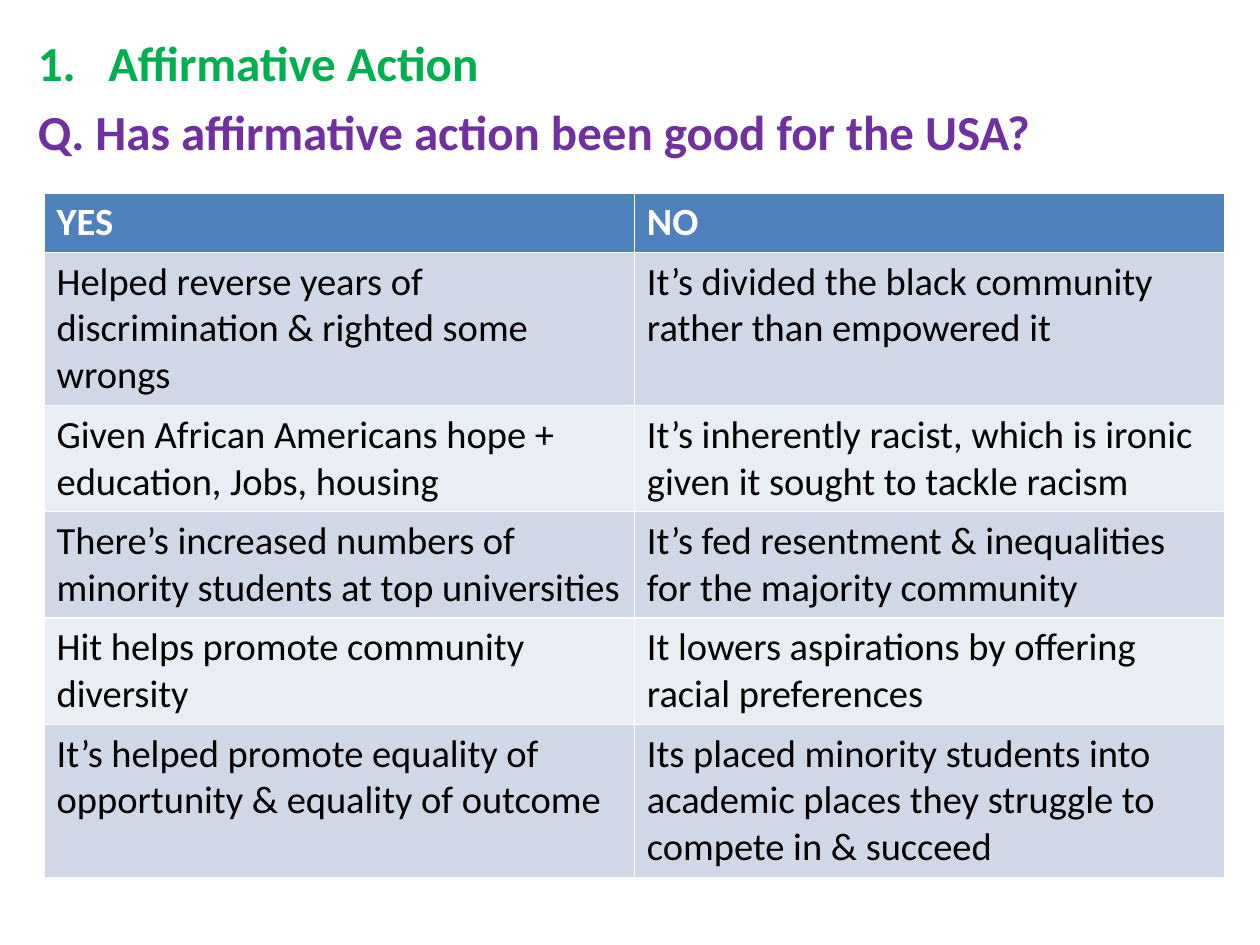
from lxml.etree import SubElement
from pptx import Presentation
from pptx.dml.color import RGBColor
from pptx.enum.text import MSO_ANCHOR, MSO_AUTO_SIZE
from pptx.oxml.ns import qn
from pptx.util import Inches, Pt

COLORS = {
    "topic": "00B050",
    "question": "7030A0",
    "header": "4F81BD",
    "band_dark": "D0D8E8",
    "band_light": "E9EDF4",
    "white": "FFFFFF",
    "black": "000000",
}

ARGUMENTS = [
    ("YES", "NO"),
    ("Helped reverse years of discrimination & righted some wrongs",
     "It’s divided the black community rather than empowered it"),
    ("Given African Americans hope + education, Jobs, housing",
     "It’s inherently racist, which is ironic given it sought to tackle racism"),
    ("There’s increased numbers of minority students at top universities",
     "It’s fed resentment & inequalities for the majority community"),
    ("Hit helps promote community diversity",
     "It lowers aspirations by offering racial preferences"),
    ("It’s helped promote equality of opportunity & equality of outcome",
     "Its placed minority students into academic places they struggle to "
     "compete in & succeed"),
]
ROW_HEIGHTS = [0.47, 1.21, 0.84, 0.84, 0.84, 1.21]


def rgb(name):
    return RGBColor.from_string(COLORS[name])


def write(paragraph, text, size=22, color="black", bold=False, font="Calibri"):
    run = paragraph.add_run()
    run.text = text
    run.font.name = font
    run.font.size = Pt(size)
    run.font.bold = bold
    run.font.color.rgb = rgb(color)


def set_marker(paragraph, numbered):
    """Number the paragraph with a hanging indent, or clear its bullet."""
    indent = Inches(0.56) if numbered else 0
    properties = paragraph._p.get_or_add_pPr()
    properties.set("marL", str(indent))
    properties.set("indent", str(-indent))
    if numbered:
        SubElement(properties, qn("a:buFont"), typeface="+mj-lt")
        SubElement(properties, qn("a:buAutoNum"), type="arabicPeriod")
    else:
        SubElement(properties, qn("a:buNone"))


class SlideBuilder:
    def __init__(self, presentation):
        # Title and Content layout: only its body is used here
        self.slide = presentation.slides.add_slide(presentation.slide_layouts[1])
        title = self.slide.shapes.title
        title.element.getparent().remove(title.element)

    def body(self, left, top, width, height, lines):
        body = self.slide.placeholders[1]
        body.left, body.top = Inches(left), Inches(top)
        body.width, body.height = Inches(width), Inches(height)
        frame = body.text_frame
        frame.auto_size = MSO_AUTO_SIZE.NONE
        frame.vertical_anchor = MSO_ANCHOR.TOP
        for index, (text, color, numbered) in enumerate(lines):
            paragraph = frame.add_paragraph() if index else frame.paragraphs[0]
            set_marker(paragraph, numbered)
            write(paragraph, text, size=28, color=color, bold=True)

    def table(self, left, top, width, rows, heights):
        table = self.slide.shapes.add_table(
            len(rows), len(rows[0]), Inches(left), Inches(top),
            Inches(width), Inches(sum(heights))).table
        for index, (row, height) in enumerate(zip(rows, heights)):
            table.rows[index].height = Inches(height)
            is_header = index == 0
            band = "band_dark" if index % 2 else "band_light"
            for column, text in enumerate(row):
                cell = table.cell(index, column)
                cell.fill.solid()
                cell.fill.fore_color.rgb = rgb("header" if is_header else band)
                write(cell.text_frame.paragraphs[0], text, bold=is_header,
                      color="white" if is_header else "black")


def main():
    presentation = Presentation()
    presentation.slide_width = Inches(10)
    presentation.slide_height = Inches(7.5)
    builder = SlideBuilder(presentation)

    # Topic and question
    builder.body(0.2, 0.21, 9.61, 7.17, [
        ("Affirmative Action", "topic", True),
        ("Q. Has affirmative action been good for the USA?", "question", False),
    ])

    # Arguments for and against
    builder.table(0.35, 1.53, 9.37, ARGUMENTS, ROW_HEIGHTS)

    presentation.save("out.pptx")


if __name__ == "__main__":
    main()
